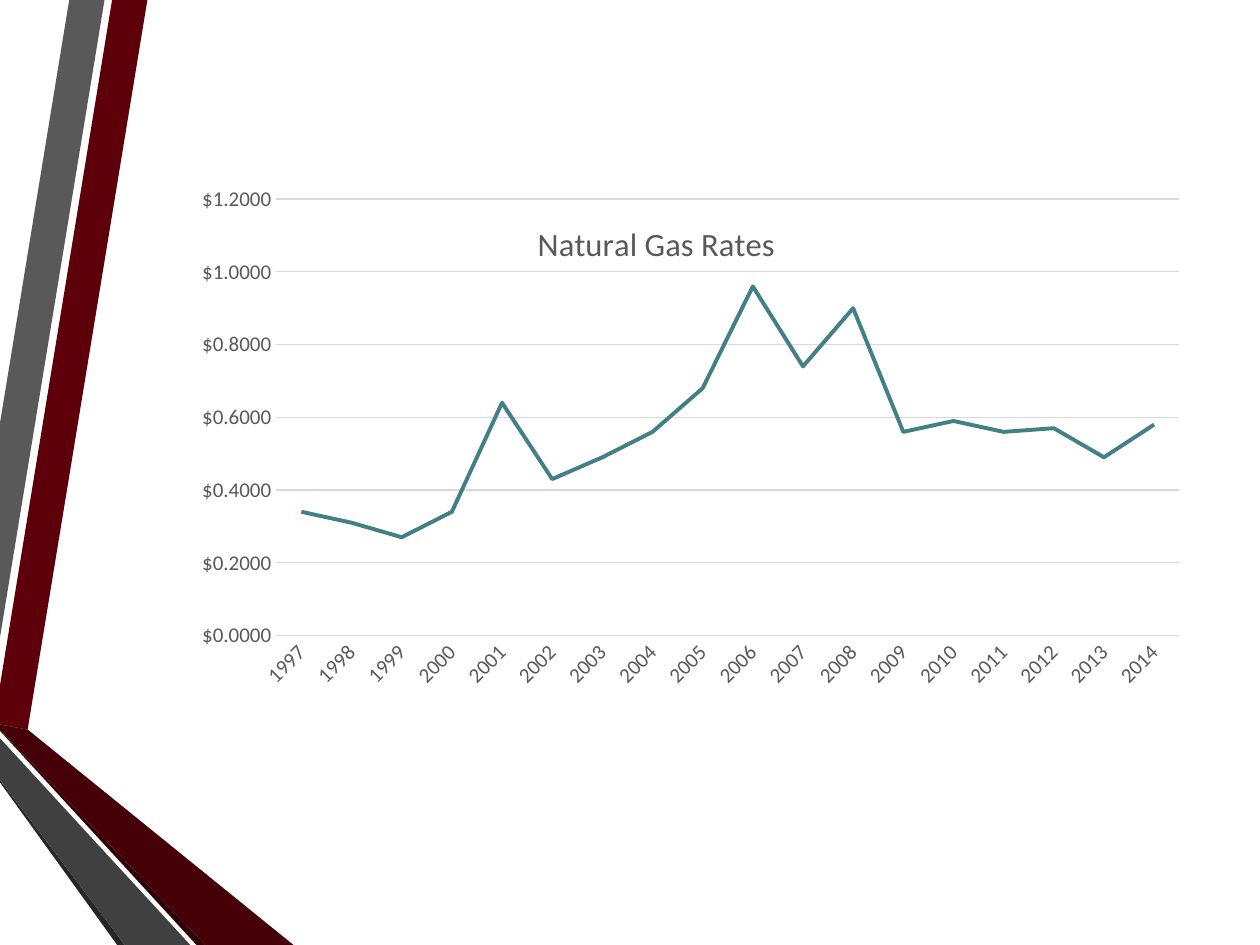
from pptx import Presentation
from pptx.chart.data import CategoryChartData
from pptx.dml.color import RGBColor
from pptx.enum.chart import XL_CHART_TYPE, XL_TICK_MARK
from pptx.oxml import parse_xml
from pptx.oxml.ns import nsdecls, qn
from pptx.util import Inches, Pt

FONT = "Calibri"
TEAL = RGBColor(0x43, 0x80, 0x86)
TEXT_GRAY = RGBColor(0x59, 0x59, 0x59)
GRID_GRAY = RGBColor(0xD9, 0xD9, 0xD9)

# Decorative ribbons from back to front: fill and outline points in inches
RIBBONS = [
    (RGBColor(0x5E, 0x00, 0x09),
     [(0, 5.44), (0, 5.75), (0.22, 5.79), (1.17, 0), (0.89, 0)]),
    (RGBColor(0x59, 0x59, 0x59),
     [(0.83, 0), (0.55, 0), (0, 3.36), (0, 5.06)]),
    (RGBColor(0x26, 0x26, 0x26),
     [(0, 6.19), (0, 6.21), (0.93, 7.5), (0.99, 7.5)]),
    (RGBColor(0x2F, 0x00, 0x04),
     [(0, 5.79), (0, 5.8), (1.56, 7.5), (1.63, 7.5)]),
    (RGBColor(0x46, 0x00, 0x07),
     [(0, 5.79), (1.63, 7.5), (2.33, 7.5), (0.22, 5.79), (0, 5.75)]),
    (RGBColor(0x40, 0x40, 0x40),
     [(0, 6.19), (0.99, 7.5), (1.51, 7.5), (0, 5.86)]),
]

YEARS = [str(year) for year in range(1997, 2015)]
RATES = [0.34, 0.31, 0.27, 0.34, 0.64, 0.43, 0.49, 0.56, 0.68,
         0.96, 0.74, 0.9, 0.56, 0.59, 0.56, 0.57, 0.49, 0.58]


def add_ribbon(slide, fill, points):
    start, *rest = [(Inches(x), Inches(y)) for x, y in points]
    builder = slide.shapes.build_freeform(*start)
    builder.add_line_segments(rest, close=True)
    sp = builder.convert_to_shape()
    sp.shadow.inherit = False
    sp.fill.solid()
    sp.fill.fore_color.rgb = fill
    sp.line.fill.background()


def format_font(font, **extra):
    font.color.rgb = TEXT_GRAY
    for name, value in {"name": FONT, "bold": False, **extra}.items():
        setattr(font, name, value)


def format_line(line, color, width):
    line.color.rgb = color
    line.width = Pt(width)


def format_axis(axis):
    axis.major_tick_mark = axis.minor_tick_mark = XL_TICK_MARK.NONE
    format_font(axis.tick_labels.font, size=Pt(12))


def set_layout(parent, index, **settings):
    """Give a chart part a manual layout, as fractions of the chart."""
    for old in parent.findall(qn("c:layout")):
        parent.remove(old)
    items = "".join(f'<c:{k} val="{v}"/>' for k, v in settings.items())
    parent.insert(index, parse_xml(
        f'<c:layout {nsdecls("c")}><c:manualLayout>{items}'
        "</c:manualLayout></c:layout>"))


def add_title(chart):
    """Lay the chart title over the plot."""
    chart.has_title = True
    title = chart.chart_title
    p = title.text_frame.paragraphs[0]
    r = p.add_run()
    r.text = "Natural Gas Rates"
    format_font(r.font, size=Pt(18.6))
    element = title._element
    set_layout(element, 1, xMode="edge", yMode="edge", x=0.38, y=0.08)
    for old in element.findall(qn("c:overlay")):
        element.remove(old)
    element.insert(2, parse_xml(f'<c:overlay {nsdecls("c")} val="1"/>'))


def add_rate_chart(slide):
    data = CategoryChartData(number_format='"$"#,##0.0000')
    data.categories = YEARS
    data.add_series("Series 1", RATES)
    chart = slide.shapes.add_chart(
        XL_CHART_TYPE.LINE, Inches(0.9), Inches(1.36),
        Inches(8.74), Inches(4.34), data).chart
    format_font(chart.font, size=Pt(10))
    chart.has_legend = False
    add_title(chart)

    years, rates = chart.category_axis, chart.value_axis
    for axis in (years, rates):
        format_axis(axis)
    format_line(years.format.line, GRID_GRAY, 0.75)
    years._element.txPr.find(qn("a:bodyPr")).set("rot", "-2700000")
    rates.minimum_scale, rates.maximum_scale, rates.major_unit = 0, 1.2, 0.2
    rates.tick_labels.number_format = '"$"#,##0.0000'
    rates.tick_labels.number_format_is_linked = False
    rates.format.line.fill.background()
    format_line(rates.major_gridlines.format.line, GRID_GRAY, 0.75)

    plot = chart.plots[0]
    plot.vary_by_categories = False
    series = plot.series[0]
    series.smooth = False
    format_line(series.format.line, TEAL, 2.25)
    set_layout(chart._chartSpace.chart.plotArea, 0, layoutTarget="inner",
               xMode="edge", yMode="edge", x=0.148, y=0.051, w=0.82, h=0.798)


def main():
    prs = Presentation()
    prs.slide_width, prs.slide_height = Inches(10), Inches(7.5)
    slide = prs.slides.add_slide(prs.slide_layouts[6])
    for fill, points in RIBBONS:
        add_ribbon(slide, fill, points)
    add_rate_chart(slide)
    prs.save("out.pptx")


if __name__ == "__main__":
    main()
